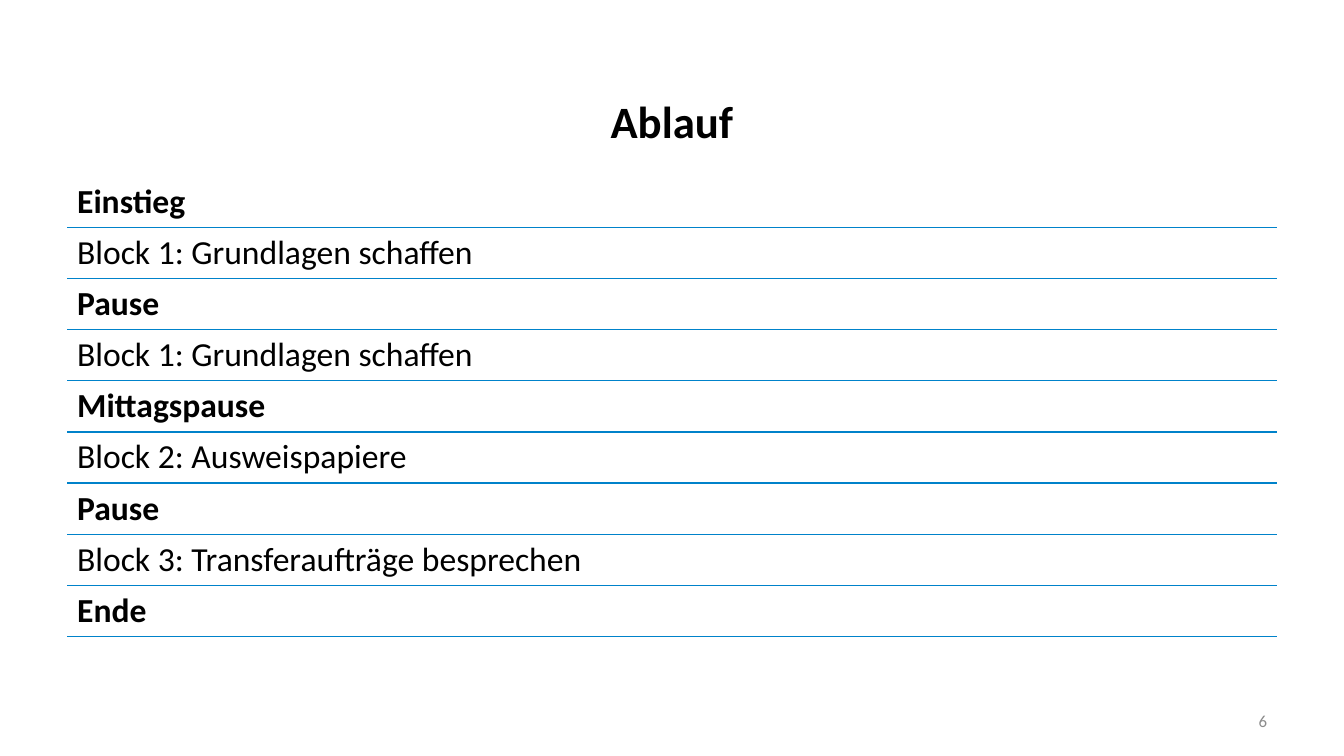
from lxml.etree import SubElement
from pptx import Presentation
from pptx.dml.color import RGBColor
from pptx.enum.text import MSO_ANCHOR, PP_ALIGN
from pptx.oxml import parse_xml
from pptx.oxml.ns import nsdecls, qn
from pptx.util import Inches, Pt


def style_text(frame, size, color, bold=False, align=PP_ALIGN.LEFT):
    paragraph = frame.paragraphs[0]
    paragraph.alignment = align
    for run in paragraph.runs:
        run.font.name = "Calibri"
        run.font.size = Pt(size)
        run.font.bold = bold
        run.font.color.rgb = RGBColor.from_string(color)


def underline_cell(cell, color):
    cell_properties = cell._tc.get_or_add_tcPr()
    border = parse_xml(f'<a:lnB {nsdecls("a")} w="{Pt(1)}"/>')
    fill = SubElement(border, qn("a:solidFill"))
    SubElement(fill, qn("a:srgbClr"), val=color)
    cell_properties.insert(0, border)


agenda = [
    "Einstieg",
    "Block 1: Grundlagen schaffen",
    "Pause",
    "Block 1: Grundlagen schaffen",
    "Mittagspause",
    "Block 2: Ausweispapiere",
    "Pause",
    "Block 3: Transferaufträge besprechen",
    "Ende",
]

deck = Presentation()
deck.slide_width = Inches(13.33)
deck.slide_height = Inches(7.5)
slide = deck.slides.add_slide(deck.slide_layouts[5])

content_width = Inches(12)
margin = (deck.slide_width - content_width) // 2
row_height = Inches(0.5)

heading = slide.shapes.title
heading.left, heading.top = margin, Inches(0.84)
heading.width, heading.height = content_width, Inches(0.71)
heading.text_frame.text = "Ablauf"
heading.text_frame.vertical_anchor = MSO_ANCHOR.MIDDLE
style_text(heading.text_frame, 32, "000000", True, PP_ALIGN.CENTER)

schedule = slide.shapes.add_table(
    len(agenda), 2, margin, Inches(1.75), content_width, row_height * len(agenda)
).table
schedule.first_row = False
schedule.horz_banding = False
schedule._tbl.tblPr.find(qn("a:tableStyleId")).text = (
    "{2D5ABB26-0587-4C30-8999-92F81FD0307C}"
)
schedule.columns[0].width = Inches(10.02)
schedule.columns[1].width = content_width - Inches(10.02)

for index, (row, entry) in enumerate(zip(schedule.rows, agenda)):
    row.cells[0].text_frame.text = entry
    style_text(row.cells[0].text_frame, 24, "000000", index % 2 == 0)
    for cell in row.cells:
        cell.fill.background()
        underline_cell(cell, "0082CA")

number_width = Inches(3.11)
page_number = slide.shapes.add_textbox(
    margin + content_width - number_width, Inches(6.95), number_width, Inches(0.4)
).text_frame
page_number.word_wrap = True
page_number.vertical_anchor = MSO_ANCHOR.MIDDLE
page_number.text = "6"
style_text(page_number, 12, "8C8C8C", align=PP_ALIGN.RIGHT)

deck.save("out.pptx")
